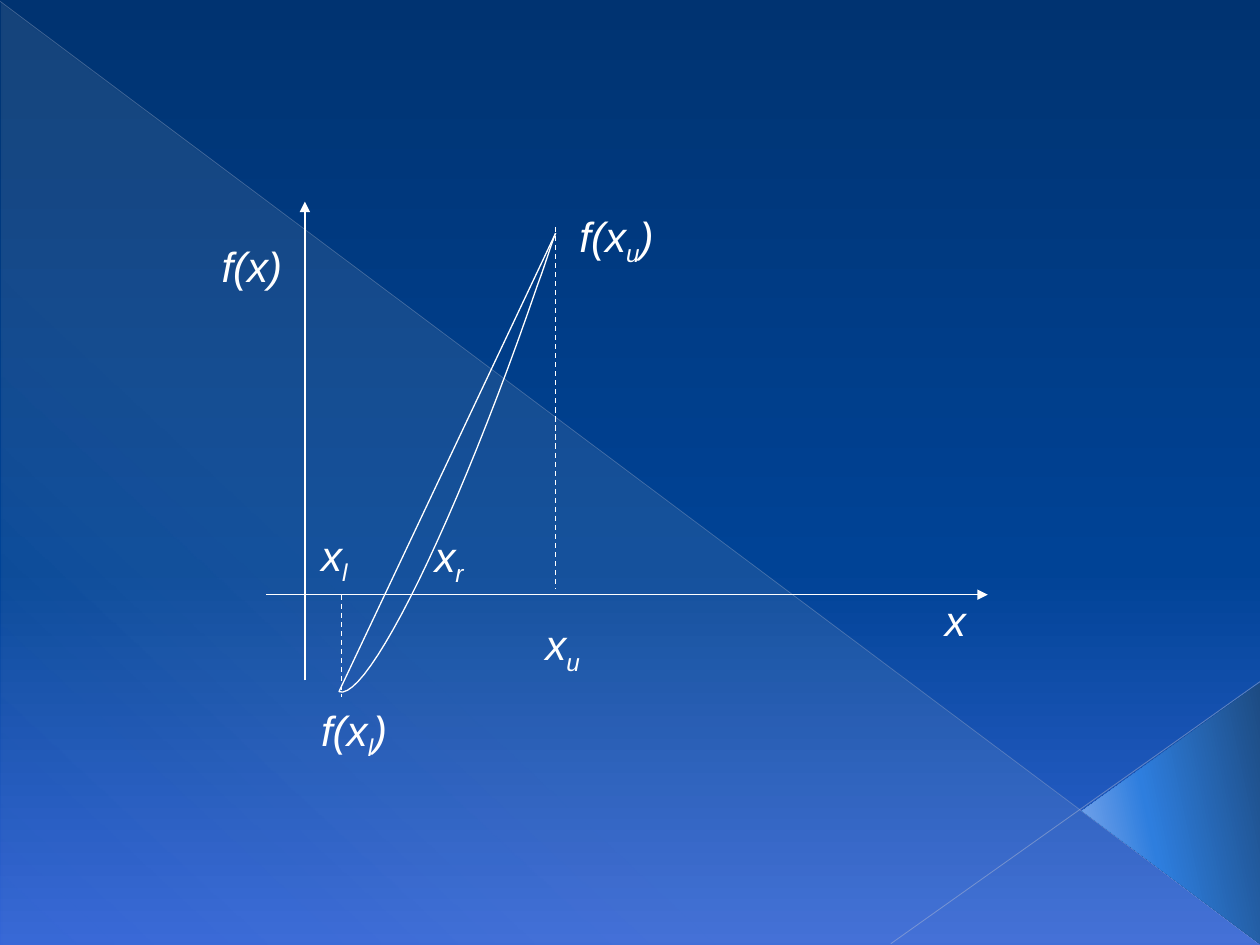
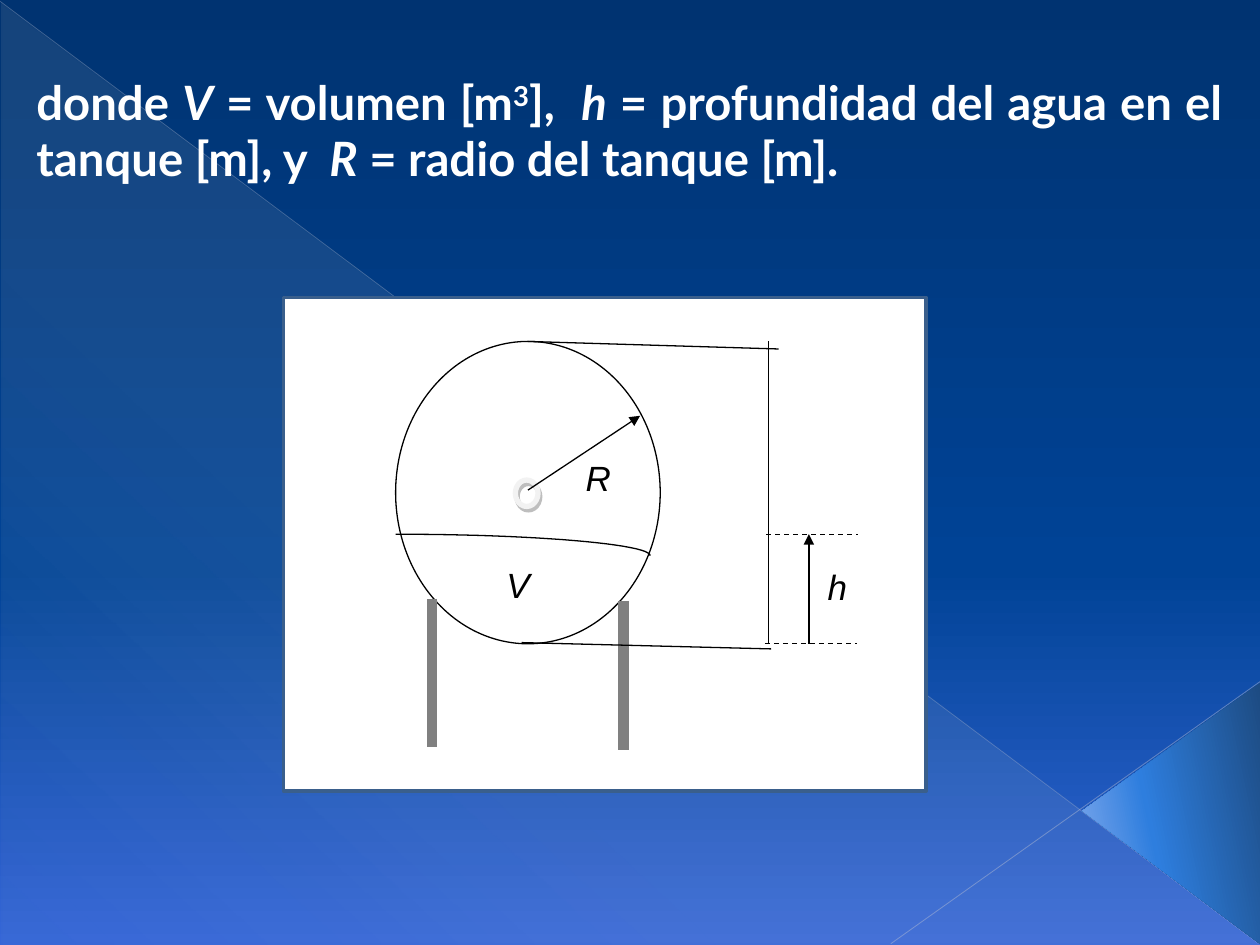
"""Two slides: a false-position plot and a spherical water tank."""
from lxml import etree
from pptx import Presentation, util as u
from pptx.dml.color import RGBColor
from pptx.enum import dml, shapes as sh, text as t
from pptx.oxml.ns import qn

SCALE = 9144
SIZE = (1000, 750)
HUE = dict(white="FFFFFF", black="000000", gray="808080", frame="3A5F8C",
           ring="F2F2F2", shade="7F7F7F", edge="ADB6CE", rim="B6BED3")
SKY = [(0, "003371", 100), (60, "004396", 100), (100, "3566D7", 100)]
VEIL = [(0, "EEECE1", 10), (70, "EEECE1", 8), (100, "EEECE1", 1)]
WEDGE = [(0, "1D4B82", 100), (60, "2E7EDE", 100), (100, "88ADED", 100)]

# (from x, from y, to x, to y, style)
PLOT_LINES = [
    (242, 540, 242, 160, "arrow"),
    (211, 472, 784, 472, "arrow"),
    (269, 549, 441, 185, ""),
    (441, 180, 441, 467, "dash"),
    (271, 472, 271, 553, "dash"),
]
ROOT_CURVE = [(441, 185), (436, 198), (432, 212), (427, 225),
              (363, 412), (292, 557), (269, 549)]
# (left, top, width, height, runs of (text, style))
PLOT_TEXT = [
    (166, 186, 78, 52, [("f(x)", "i")]),
    (740, 467, 55, 52, [("x", "i")]),
    (245, 415, 55, 52, [("x", "i"), ("l", "i sub")]),
    (335, 416, 55, 52, [("x", "i"), ("r", "i sub")]),
    (423, 486, 55, 52, [("x", "i"), ("u", "i sub")]),
    (450, 162, 95, 50, [("f(x", "i"), ("u", "i sub"), (")", "i")]),
    (245, 554, 95, 50, [("f(x", "i"), ("l", "i sub"), (")", "i")]),
]

LEGEND = [("donde ", "b"), ("V", "b i"), (" = volumen [m", "b"), ("3", "b sup"),
          ("],  ", "b"), ("h", "b i"),
          (" = profundidad del agua en el tanque [m], y  ", "b"),
          ("R", "b i"), (" = radio del tanque [m].", "b")]
TANK_LINES = [
    (419, 389, 508, 330, "arrow"),
    (343, 475, 343, 593, "leg"),
    (495, 477, 495, 595, "leg"),
    (610, 271, 610, 511, ""),
    (608, 424, 681, 424, "dash"),
    (607, 511, 680, 511, "dash"),
    (642, 511, 642, 424, "arrow"),
    (419, 271, 618, 277, ""),
    (414, 510, 612, 515, ""),
]
WATER = [(314, 424), (425, 424), (516, 432), (516, 441)]
TANK_TEXT = [
    (392, 442, 55, 44, [("V", "i")]),
    (647, 444, 55, 44, [("h", "i")]),
    (455, 357, 55, 44, [("R", "i")]),
]


def emu(*vals):
    return [round(v * SCALE) for v in vals]


def rgb(name):
    return RGBColor.from_string(HUE[name])


def sub(node, tag, **attrs):
    return etree.SubElement(node, qn(tag), {k: str(v) for k, v in attrs.items()})


def blend(fill, node, stops, angle):
    """Fill with a linear gradient of (place, colour, opacity) stops."""
    fill.gradient()
    fill.gradient_angle = 360 - angle
    row = node.find(".//" + qn("a:gsLst"))
    for old in list(row):
        row.remove(old)
    for place, color, alpha in stops:
        stop = sub(row, "a:gs", pos=place * 1000)
        sub(sub(stop, "a:srgbClr", val=color), "a:alpha", val=alpha * 1000)


def stroke(item, color, width):
    item.line.color.rgb = rgb(color)
    item.line.width = u.Pt(width)


def link(pen, ends, color, width=0.75, style="", alpha=100):
    """Draw a straight line, dashed or with an arrowhead."""
    wire = pen.add_connector(sh.MSO_CONNECTOR.STRAIGHT, *emu(*ends))
    stroke(wire, color, width)
    if style == "dash":
        wire.line.dash_style = dml.MSO_LINE.DASH
    prop = wire._element.spPr
    if alpha < 100:
        sub(prop.find(".//" + qn("a:srgbClr")), "a:alpha", val=alpha * 1000)
    if style == "arrow":
        sub(prop.find(qn("a:ln")), "a:tailEnd", type="triangle")
    sub(prop, "a:effectLst")


def shape(pen, kind, box, fill=None, line=None, width=0.75):
    item = pen.add_shape(kind, *emu(*box))
    item.shadow.inherit = False
    if fill:
        item.fill.solid()
        item.fill.fore_color.rgb = rgb(fill)
    else:
        item.fill.background()
    if line:
        stroke(item, line, width)
    else:
        item.line.fill.background()
    return item


def curve(pen, pts, color, steps=24):
    """Trace a chain of cubic Bezier segments."""
    trace = []
    for at in range(0, len(pts) - 1, 3):
        for n in range(1, steps + 1):
            f = n / steps
            g = 1 - f
            part = (g ** 3, 3 * g * g * f, 3 * g * f * f, f ** 3)
            spot = zip(*pts[at:at + 4])
            trace.append(emu(*(sum(w * c for w, c in zip(part, axis)) for axis in spot)))
    path = pen.build_freeform(*emu(*pts[0]), scale=1.0)
    path.add_line_segments(trace, close=False)
    item = path.convert_to_shape()
    item.shadow.inherit = False
    item.fill.background()
    stroke(item, color, 0.75)


def write(pen, box, runs, size, color, font="Arial", align=t.PP_ALIGN.LEFT):
    frame = pen.add_textbox(*emu(*box)).text_frame
    frame.word_wrap = True
    frame.auto_size = t.MSO_AUTO_SIZE.SHAPE_TO_FIT_TEXT
    para = frame.paragraphs[0]
    para.alignment = align
    for words, style in runs:
        run = para.add_run()
        run.text = words
        face = run.font
        face.name, face.size, face.color.rgb = font, u.Pt(size), rgb(color)
        marks = style.split()
        face.bold, face.italic = "b" in marks, "i" in marks
        base = {"sub": -25000, "sup": 30000}.get(marks[-1])
        if base:
            run._r.get_or_add_rPr().set("baseline", str(base))


def backdrop(deck):
    """Add a slide with the shared background and corner shapes."""
    slide = deck.slides.add_slide(deck.slide_layouts[6])
    blend(slide.background.fill, slide._element, SKY, 90)
    pen = slide.shapes
    veil = shape(pen, sh.MSO_SHAPE.RIGHT_TRIANGLE, (1, 2, 999, 748))
    blend(veil.fill, veil._element, VEIL, 133)
    link(pen, (0, 1, 999, 749), "edge", 0.39, alpha=35)
    link(pen, (1000, 541, 707, 749), "rim", 0.47, alpha=45)
    wedge = shape(pen, sh.MSO_SHAPE.ISOSCELES_TRIANGLE, (826, 575, 207, 141))
    wedge.adjustments[0] = 0.51
    wedge.rotation = 270
    blend(wedge.fill, wedge._element, WEDGE, 258)
    return pen


def plot(deck):
    pen = backdrop(deck)
    for *ends, style in PLOT_LINES:
        link(pen, ends, "white", style=style)
    curve(pen, ROOT_CURVE, "white")
    for *box, runs in PLOT_TEXT:
        write(pen, box, runs, 24, "white")


def tank(deck):
    page = backdrop(deck)
    write(page, (19, 53, 961, 146), LEGEND, 27, "white", "Lato", t.PP_ALIGN.JUSTIFY)
    pen = page.add_group_shape().shapes
    shape(pen, sh.MSO_SHAPE.RECTANGLE, (225, 236, 510, 392), "white", "frame", 2)
    shape(pen, sh.MSO_SHAPE.OVAL, (314, 271, 210, 240), line="black")
    hub = shape(pen, sh.MSO_SHAPE.FLOWCHART_CONNECTOR, (409, 381, 18, 21),
                line="ring", width=3)
    glow = sub(hub._element.spPr.find(qn("a:effectLst")), "a:outerShdw",
               dist=u.Pt(2.2), dir=63 * 60000, algn="ctr", rotWithShape=0)
    sub(sub(glow, "a:srgbClr", val=HUE["shade"]), "a:alpha", val=50000)
    for *ends, style in TANK_LINES:
        leg = style == "leg"
        link(pen, ends, "gray" if leg else "black", 6 if leg else 0.75, style)
    curve(pen, WATER, "black")
    for *box, runs in TANK_TEXT:
        write(pen, box, runs, 20, "black")


def main():
    deck = Presentation()
    deck.slide_width, deck.slide_height = emu(*SIZE)
    plot(deck)
    tank(deck)
    deck.save("out.pptx")


if __name__ == "__main__":
    main()
